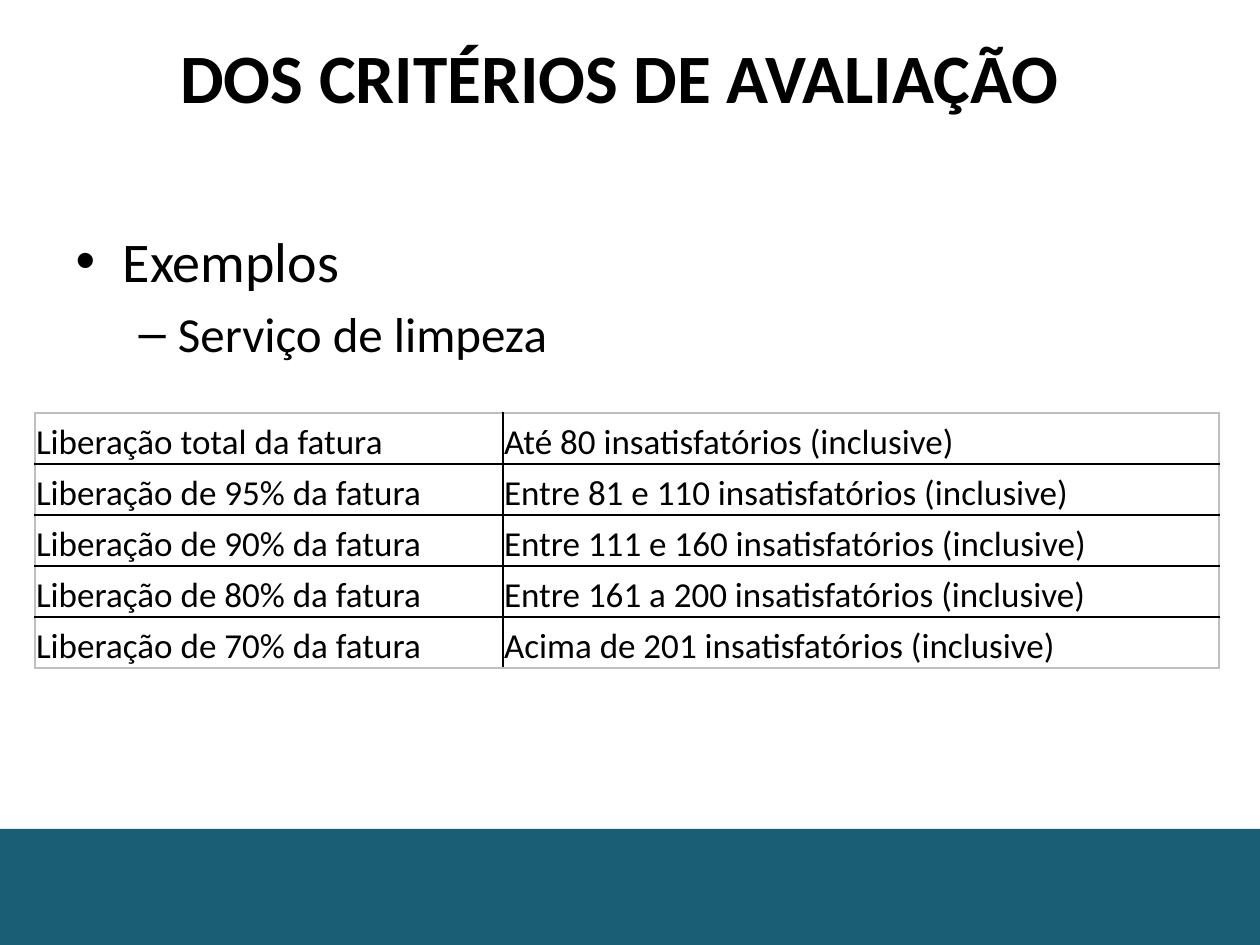
"""Build the slide on evaluation criteria for cleaning services."""
from lxml.etree import SubElement
from pptx import Presentation
from pptx.dml.color import RGBColor
from pptx.enum.shapes import MSO_SHAPE as Shape
from pptx.enum.text import MSO_ANCHOR as Anchor, MSO_AUTO_SIZE as AutoSize, PP_ALIGN as Align
from pptx.oxml.ns import qn
from pptx.util import Emu, Pt

SCALE = 914400 / 126
THEME = {
    "font": "Calibri", "ink": "000000", "edge": "BFBFBF", "band": "1A5E75",
    "title": 39.6, "levels": (32, 28), "cell": 20, "rule": 1,
}
ROWS = [
    ("Liberação total da fatura", "Até 80 insatisfatórios (inclusive)"),
    ("Liberação de 95% da fatura", "Entre 81 e 110 insatisfatórios (inclusive)"),
    ("Liberação de 90% da fatura", "Entre 111 e 160 insatisfatórios (inclusive)"),
    ("Liberação de 80% da fatura", "Entre 161 a 200 insatisfatórios (inclusive)"),
    ("Liberação de 70% da fatura", "Acima de 201 insatisfatórios (inclusive)"),
]
COLUMNS = (468, 716)
ROW_HEIGHT = 51


def px(*lengths):
    return [Emu(round(length * SCALE)) for length in lengths]


def write(para, text, size, bold=False):
    span = para.add_run()
    span.text = text
    for name, value in {"name": THEME["font"], "size": Pt(size), "bold": bold}.items():
        setattr(span.font, name, value)
    span.font.color.rgb = RGBColor.from_string(THEME["ink"])


deck = Presentation()
deck.slide_width, deck.slide_height = px(1260, 945)
page = deck.slides.add_slide(deck.slide_layouts[1])
title, body = page.placeholders

band = page.shapes.add_shape(Shape.RECTANGLE, *px(0, 829, 1260, 116))
band.shadow.inherit = False
band.fill.solid()
band.fill.fore_color.rgb = RGBColor.from_string(THEME["band"])
band.line.fill.background()
title.element.addprevious(band.element)

for box, place in ((title, (64, 26, 1111, 100)), (body, (63, 220, 1134, 624))):
    for name, value in zip(("left", "top", "width", "height"), px(*place)):
        setattr(box, name, value)
    box.text_frame.auto_size = AutoSize.NONE

title.text_frame.vertical_anchor = Anchor.MIDDLE
heading = title.text_frame.paragraphs[0]
heading.alignment = Align.CENTER
write(heading, "DOS CRITÉRIOS DE AVALIAÇÃO", THEME["title"], bold=True)

for level, text in enumerate(("Exemplos", "Serviço de limpeza")):
    para = body.text_frame.add_paragraph() if level else body.text_frame.paragraphs[0]
    para.level, para.alignment = level, Align.JUSTIFY
    if level == 0:
        para.space_before = Pt(0)
    write(para, text, THEME["levels"][level])

frame = page.shapes.add_table(
    len(ROWS), len(COLUMNS), *px(35, 413, sum(COLUMNS), ROW_HEIGHT * len(ROWS)))
table = frame.table
table.first_row = table.horz_banding = False
for column, width in zip(table.columns, px(*COLUMNS)):
    column.width = width
for row in table.rows:
    row.height = px(ROW_HEIGHT)[0]

inset = px(1)[0]
cell_format = {
    "vertical_anchor": Anchor.BOTTOM, "margin_left": inset,
    "margin_right": inset, "margin_top": inset, "margin_bottom": 0,
}
for i, texts in enumerate(ROWS):
    for j, text in enumerate(texts):
        cell = table.cell(i, j)
        for name, value in cell_format.items():
            setattr(cell, name, value)
        write(cell.text_frame.paragraphs[0], text, THEME["cell"])
        outer = {
            "L": j == 0, "R": j == len(COLUMNS) - 1,
            "T": i == 0, "B": i == len(ROWS) - 1,
        }
        properties = cell._tc.get_or_add_tcPr()
        for side, is_outer in outer.items():
            line = SubElement(properties, qn(f"a:ln{side}"), w=str(Pt(THEME["rule"])))
            fill = SubElement(line, qn("a:solidFill"))
            SubElement(fill, qn("a:srgbClr"), val=THEME["edge" if is_outer else "ink"])
        cell.fill.background()

deck.save("out.pptx")
